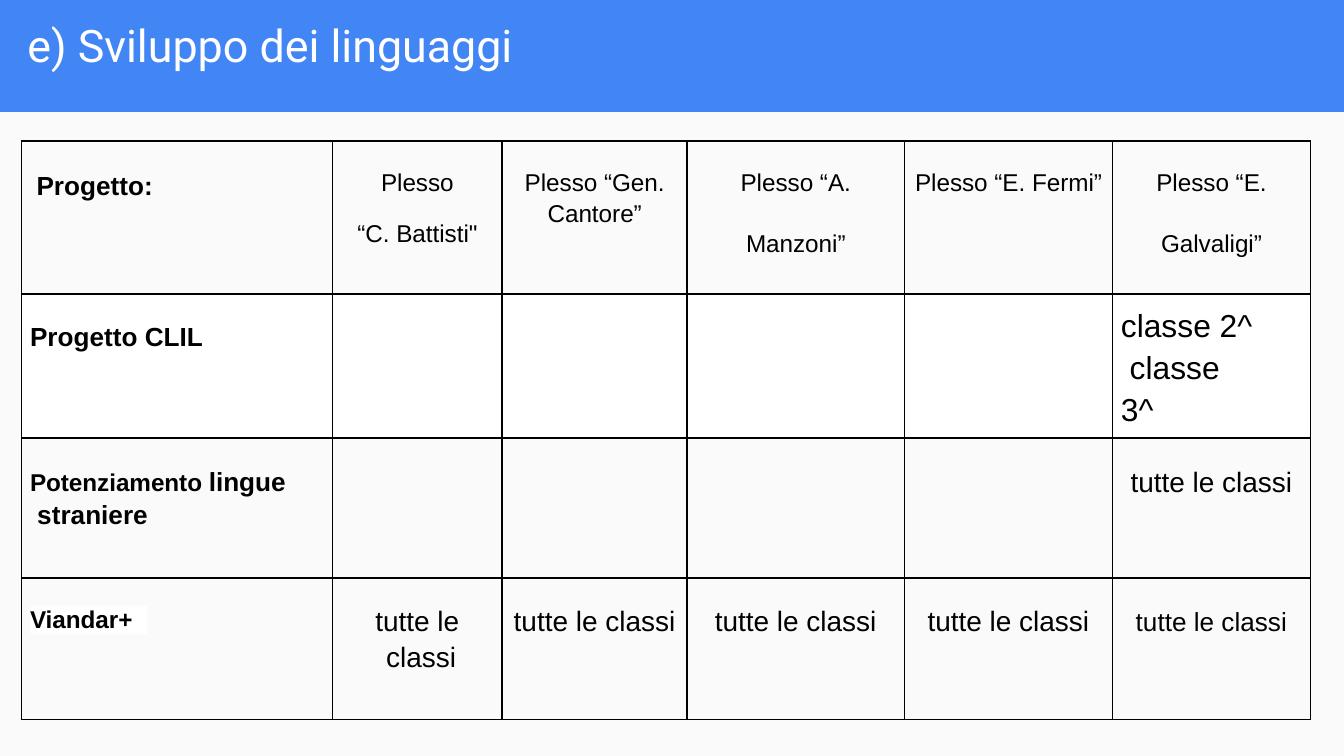
from lxml import etree
from pptx import Presentation
from pptx.dml.color import RGBColor
from pptx.enum import shapes, text
from pptx.oxml import ns
from pptx.util import Pt

BLUE, PAPER, WHITE, BLACK = "4285F4", "FAFAFA", "FFFFFF", "000000"
COLUMNS = [166.5, 91, 99, 116.5, 111.5, 106]
ROWS = [82, 77, 75, 76]
LEFT, TOP = 11.6, 75.6
ALL_CLASSES = ["tutte le classi"]

SCHOOLS = [
    (["Plesso", "“C. Battisti\""], 13),
    (["Plesso “Gen.", "Cantore”"], 2.4),
    (["Plesso “A.", "Manzoni”"], 18.5),
    (["Plesso “E. Fermi”"], 0),
    (["Plesso “E.", "Galvaligi”"], 18.5),
]
PROJECTS = [
    (["Progetto:"], 14, 8, 16.5),
    (["Progetto CLIL"], 14, 4.5, 15.5),
    ([[("Potenziamento ", 13), ("lingue", 14)], " straniere"], 14, 4.5, 16),
    (["Viandar+"], 13, 4.5, 15.5),
]


def paint(target, color):
    target.solid()
    target.fore_color.rgb = RGBColor.from_string(color)


def add_panel(slide, left, top, width, height, color):
    panel = slide.shapes.add_shape(
        shapes.MSO_SHAPE.RECTANGLE, Pt(left), Pt(top), Pt(width), Pt(height))
    panel.shadow.inherit = False
    paint(panel.fill, color)
    panel.line.fill.background()


def add_title(slide, wording):
    title = slide.shapes.title
    title.left, title.top, title.width, title.height = Pt(13.7), Pt(9.5), Pt(280), Pt(31)
    frame = title.text_frame
    frame.margin_left = Pt(1)
    frame.margin_top = frame.margin_right = frame.margin_bottom = 0
    frame.vertical_anchor = text.MSO_ANCHOR.TOP
    frame.word_wrap = True
    frame.text = wording
    heading = frame.paragraphs[0]
    heading.alignment = text.PP_ALIGN.LEFT
    heading.font.name, heading.font.size = "Roboto", Pt(24)
    paint(heading.font.fill, WHITE)


def set_borders(cell):
    properties = cell._tc.get_or_add_tcPr()
    for position, side in enumerate(("lnL", "lnR", "lnT", "lnB")):
        border = etree.Element(ns.qn(f"a:{side}"), w=str(Pt(1)))
        fill = etree.SubElement(border, ns.qn("a:solidFill"))
        etree.SubElement(fill, ns.qn("a:srgbClr"), val=BLACK)
        properties.insert(position, border)


def write_cell(cell, lines, size, gap=0, bold=False, indent=None, top=15):
    cell.margin_left = Pt(indent or 0)
    cell.margin_right = cell.margin_bottom = 0
    cell.margin_top = Pt(top)
    frame = cell.text_frame
    for number, line in enumerate(lines):
        paragraph = frame.add_paragraph() if number else frame.paragraphs[0]
        paragraph.alignment = text.PP_ALIGN.CENTER if indent is None else text.PP_ALIGN.LEFT
        if number:
            paragraph.space_before = Pt(gap)
        paragraph.font.name, paragraph.font.size = "Arial", Pt(size)
        paragraph.font.bold = bold
        paint(paragraph.font.fill, BLACK)
        if isinstance(line, str):
            paragraph.text = line
            continue
        for wording, run_size in line:
            run = paragraph.add_run()
            run.text = wording
            run.font.size = Pt(run_size)


def add_grid(slide):
    grid = slide.shapes.add_table(
        len(ROWS), len(COLUMNS), Pt(LEFT), Pt(TOP),
        Pt(sum(COLUMNS)), Pt(sum(ROWS))).table
    for column, width in zip(grid.columns, COLUMNS):
        column.width = Pt(width)
    for row, height in zip(grid.rows, ROWS):
        row.height = Pt(height)
    for row_number, row in enumerate(grid.rows):
        for cell in row.cells:
            paint(cell.fill, WHITE if row_number == 1 else PAPER)
            set_borders(cell)
    grid.cell(3, 0).fill.background()
    return grid


def fill_grid(grid):
    for row, (lines, size, indent, top) in enumerate(PROJECTS):
        write_cell(grid.cell(row, 0), lines, size, 2, True, indent, top)
    for column, (lines, gap) in enumerate(SCHOOLS, 1):
        write_cell(grid.cell(0, column), lines, 13, gap)
    write_cell(grid.cell(1, 5), ["classe 2^", " classe", "3^"], 17, 3.4, indent=4.5, top=8)
    write_cell(grid.cell(2, 5), ALL_CLASSES, 15, top=15.5)
    write_cell(grid.cell(3, 1), ["tutte le", " classi"], 15, 2.5, top=15.5)
    for column in (2, 3, 4):
        write_cell(grid.cell(3, column), ALL_CLASSES, 15)
    write_cell(grid.cell(3, 5), ALL_CLASSES, 14, top=16)


def main():
    deck = Presentation()
    deck.slide_width, deck.slide_height = Pt(720), Pt(405)
    slide = deck.slides.add_slide(deck.slide_layouts[5])
    paint(slide.background.fill, BLUE)
    add_panel(slide, 0, 60, 720, 345, PAPER)
    add_title(slide, "e) Sviluppo dei linguaggi")
    add_panel(slide, 12, 157.6, 690.5, 75, WHITE)
    add_panel(slide, 16.3, 324.4, 62.6, 15.5, WHITE)
    fill_grid(add_grid(slide))
    deck.save("out.pptx")


if __name__ == "__main__":
    main()
